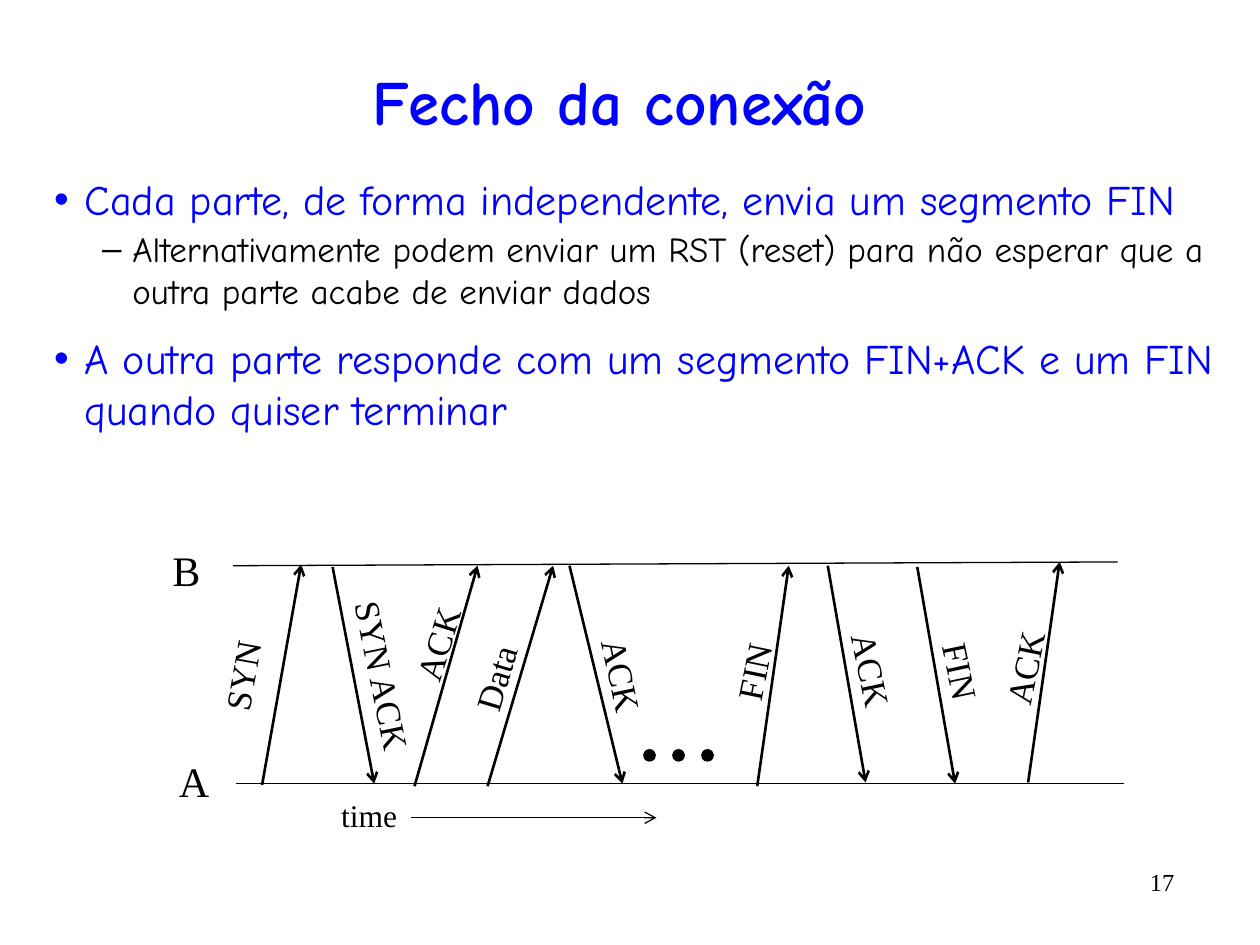
from pptx import Presentation
from pptx.dml.color import RGBColor
from pptx.enum.shapes import MSO_CONNECTOR, MSO_SHAPE
from pptx.enum.text import MSO_ANCHOR, MSO_AUTO_SIZE, PP_ALIGN
from pptx.oxml.ns import qn
from pptx.util import Inches, Pt
from lxml.etree import SubElement

BLUE, BLACK = "0000FF", "000000"
HEAD, SERIF = "Comic Neue", "Times New Roman"

# start, end, label, label centre, label angle
STEPS = [
    ((0.83, 1.98), (1.14, 0.23), "SYN", (0.67, 1.11), 280.1),
    ((1.39, 0.25), (1.72, 1.97), "SYN ACK", (1.79, 1.11), 78.5),
    ((2.04, 1.99), (2.54, 0.24), "ACK", (2.22, 0.86), 287.4),
    ((2.62, 1.99), (3.14, 0.24), "Data", (2.68, 1.13), 286.7),
    ((3.27, 0.24), (3.69, 1.97), "ACK", (3.69, 1.11), 77.9),
    ((4.76, 1.99), (5.01, 0.24), "FIN", (4.73, 1.08), 281.6),
    ((5.32, 0.24), (5.62, 1.96), "ACK", (5.67, 1.07), 78.1),
    ((6.03, 0.25), (6.33, 1.97), "FIN", (6.38, 1.08), 78.1),
    ((6.91, 1.96), (7.16, 0.21), "ACK", (6.88, 1.05), 281.6),
]
WIDTHS = {"SYN": 0.76, "SYN ACK": 1.42, "ACK": 0.79, "Data": 0.73, "FIN": 0.65}


def color(code):
    return RGBColor.from_string(code)


def style(para, size, font, code, bold=False):
    for run in para.runs:
        run.font.size = Pt(size)
        run.font.name = font
        run.font.bold = bold
        run.font.color.rgb = color(code)


def place(shape, left, top, width, height):
    shape.left, shape.top = Inches(left), Inches(top)
    shape.width, shape.height = Inches(width), Inches(height)


def add_title(slide, box):
    title = slide.shapes.title
    place(title, *box)
    frame = title.text_frame
    frame.text = "Fecho da conexão"
    frame.vertical_anchor = MSO_ANCHOR.MIDDLE
    frame.auto_size = MSO_AUTO_SIZE.NONE
    frame.paragraphs[0].alignment = PP_ALIGN.CENTER
    style(frame.paragraphs[0], 36, HEAD, BLUE, True)


def add_list(slide, box):
    body = slide.placeholders[1]
    place(body, *box)
    frame = body.text_frame
    frame.auto_size = MSO_AUTO_SIZE.NONE
    items = [
        (0, "Cada parte, de forma independente, envia um segmento FIN"),
        (1, "Alternativamente podem enviar um RST (reset) para não esperar "
            "que a outra parte acabe de enviar dados"),
        (0, "A outra parte responde com um segmento FIN+ACK e um FIN "
            "quando quiser terminar"),
    ]
    looks = [(24, BLUE, 12, 0.24), (20, BLACK, 2, 0.62)]
    frame.text = "\n".join(text for _, text in items)
    for para, (level, _) in zip(frame.paragraphs, items):
        size, code, gap, indent = looks[level]
        para.level = level
        para.space_before = Pt(gap)
        props = para._p.get_or_add_pPr()
        props.set("marL", str(Inches(indent)))
        props.set("indent", str(Inches(-0.24)))
        style(para, size, HEAD, code)


def add_line(slide, start, end, width, arrow=False):
    line = slide.shapes.add_connector(
        MSO_CONNECTOR.STRAIGHT, *map(Inches, start + end))
    line.line.color.rgb = color(BLACK)
    line.line.width = Pt(width)
    if arrow:
        SubElement(line.line._get_or_add_ln(), qn("a:tailEnd"), type="arrow")
    SubElement(line._element.spPr, qn("a:effectLst"))


def add_label(slide, text, center, width, height, size, angle=0):
    x, y = center
    label = slide.shapes.add_textbox(
        Inches(x - width / 2), Inches(y - height / 2),
        Inches(width), Inches(height))
    label.rotation = angle
    frame = label.text_frame
    frame.text = text
    frame.word_wrap = False
    frame.auto_size = MSO_AUTO_SIZE.SHAPE_TO_FIT_TEXT
    frame.vertical_anchor = MSO_ANCHOR.MIDDLE
    frame.paragraphs[0].alignment = PP_ALIGN.CENTER
    style(frame.paragraphs[0], size, SERIF, BLACK)


def add_dot(slide, x, y):
    size = Inches(0.09)
    dot = slide.shapes.add_shape(
        MSO_SHAPE.OVAL, Inches(x), Inches(y), size, size)
    dot.shadow.inherit = False
    dot.fill.solid()
    dot.fill.fore_color.rgb = color(BLACK)
    dot.line.color.rgb = color(BLACK)
    dot.line.width = Pt(0.75)


def add_flow(slide, left, top):
    """Messages between hosts A and B over time."""
    def at(x, y):
        return left + x, top + y

    add_line(slide, at(0.6, 0.24), at(7.62, 0.21), 0.75)
    add_line(slide, at(0.62, 1.97), at(7.67, 1.97), 0.75)
    add_label(slide, "B", at(0.23, 0.27), 0.42, 0.5, 24)
    add_label(slide, "A", at(0.29, 1.95), 0.44, 0.5, 24)
    for start, end, text, center, angle in STEPS:
        add_line(slide, at(*start), at(*end), 1.5, True)
        add_label(slide, text, at(*center), WIDTHS[text], 0.43, 20, angle)
    for i in range(3):
        add_dot(slide, *at(3.86 + 0.23 * i, 1.7))
    add_label(slide, "time", at(1.68, 2.22), 0.65, 0.4, 18)
    add_line(slide, at(2.01, 2.24), at(3.96, 2.24), 0.75, True)


def add_number(slide, box):
    number = slide.shapes.add_textbox(*map(Inches, box))
    frame = number.text_frame
    frame.text = "17"
    frame.word_wrap = True
    frame.paragraphs[0].alignment = PP_ALIGN.RIGHT
    style(frame.paragraphs[0], 14, SERIF, BLACK)


def main():
    deck = Presentation()
    deck.slide_width, deck.slide_height = Inches(10), Inches(7.5)
    slide = deck.slides.add_slide(deck.slide_layouts[1])
    add_title(slide, (0.33, 0.42, 9.17, 0.75))
    add_list(slide, (0.33, 1.33, 9.42, 6))
    add_flow(slide, 1.25, 4.25)
    add_number(slide, (8.42, 6.83, 1, 0.42))
    deck.save("out.pptx")


if __name__ == "__main__":
    main()
